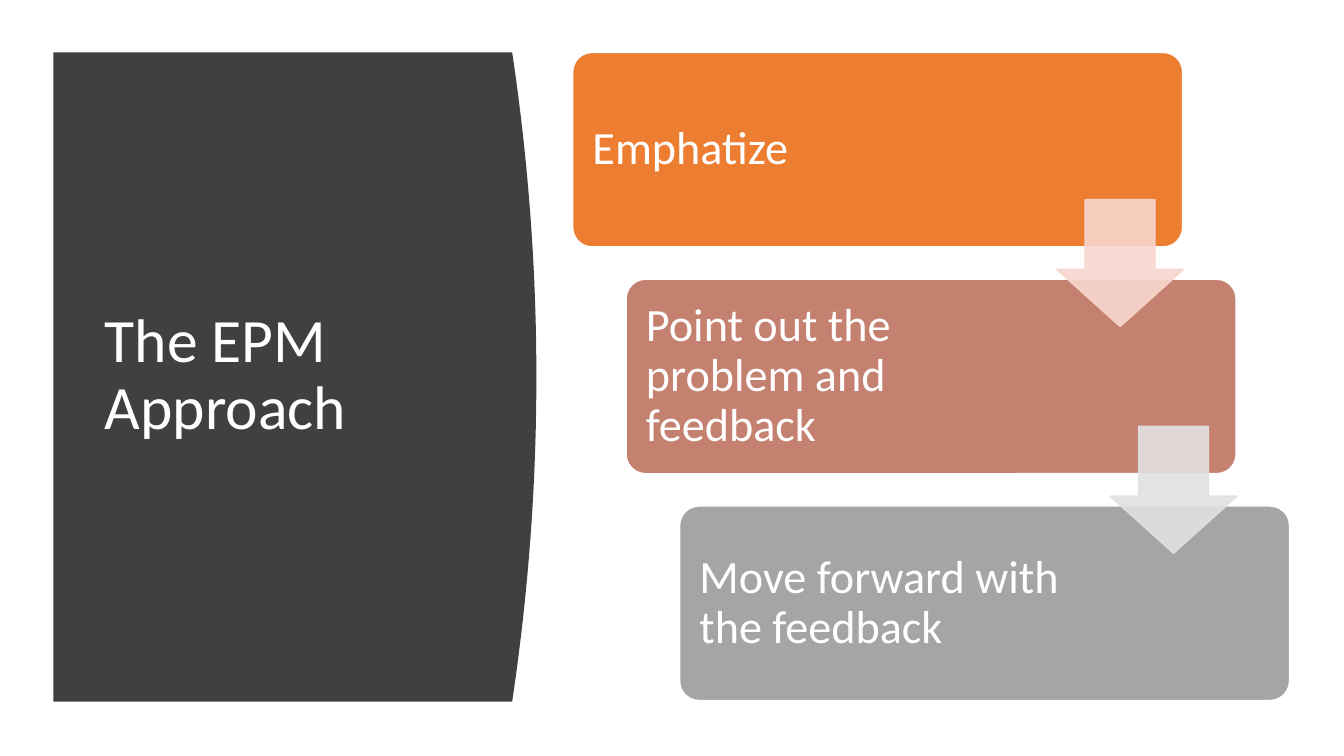
from dataclasses import dataclass
from lxml.etree import SubElement
from pptx import Presentation
from pptx.dml.color import RGBColor
from pptx.enum.shapes import MSO_SHAPE
from pptx.enum.text import MSO_ANCHOR, MSO_AUTO_SIZE, PP_ALIGN
from pptx.oxml.ns import qn
from pptx.util import Inches, Pt


@dataclass(frozen=True)
class Theme:
    font: str = "Calibri"
    white: str = "FFFFFF"
    panel: str = "404040"
    steps: tuple = ("ED7D31", "C48170", "A5A5A5")
    arrows: tuple = ("F8D7CE", "E1E1E1")
    title: int = 44
    body: int = 33


def apply(target, values):
    for name, value in values.items():
        setattr(target, name, value)


class Deck:
    def __init__(self, theme):
        self.theme = theme
        self.file = Presentation()
        apply(self.file, {"slide_width": Inches(13.33), "slide_height": Inches(7.5)})
        self.slide = self.file.slides.add_slide(self.file.slide_layouts[5])
        self.shapes = self.slide.shapes

    def paint(self, shape, fill, line=None, alpha=100):
        shape.shadow.inherit = False
        shape.fill.solid()
        shape.fill.fore_color.rgb = RGBColor.from_string(fill)
        if line is None:
            shape.line.fill.background()
            return
        shape.line.color.rgb = RGBColor.from_string(line)
        shape.line.width = Pt(1)
        if alpha < 100:
            for color in shape.element.spPr.iter(qn("a:srgbClr")):
                SubElement(color, qn("a:alpha"), val=str(alpha * 1000))

    def label(self, shape, text, size, inset):
        frame = shape.text_frame
        frame.text = text
        apply(frame, {
            "word_wrap": True,
            "auto_size": MSO_AUTO_SIZE.NONE,
            "vertical_anchor": MSO_ANCHOR.MIDDLE,
            **{f"margin_{side}": Inches(gap) for side, gap in inset.items()},
        })
        line = frame.paragraphs[0]
        apply(line, {"alignment": PP_ALIGN.LEFT, "line_spacing": 0.9})
        font = line.runs[0].font
        apply(font, {"name": self.theme.font, "size": Pt(size)})
        font.color.rgb = RGBColor.from_string(self.theme.white)

    def title(self, text, left, top, width, height):
        shape = self.shapes.title
        apply(shape, {
            "left": Inches(left), "top": Inches(top),
            "width": Inches(width), "height": Inches(height),
        })
        inset = {"left": 0.1, "right": 0.1, "top": 0.05, "bottom": 0.05}
        self.label(shape, text, self.theme.title, inset)

    def panel(self, left, top, edge, bulge, height, parts=40):
        curve = [
            (edge + bulge * (1 - (2 * part / parts - 1) ** 2),
             top + height * part / parts)
            for part in range(parts + 1)
        ]
        points = [(Inches(x), Inches(y)) for x, y in curve + [(left, top + height)]]
        pen = self.shapes.build_freeform(Inches(left), Inches(top))
        pen.add_line_segments(points, close=True)
        shape = pen.convert_to_shape()
        self.paint(shape, self.theme.panel)
        self.shapes.title.element.addprevious(shape.element)

    def step(self, text, fill, left, top, width, height):
        shape = self.shapes.add_shape(
            MSO_SHAPE.ROUNDED_RECTANGLE,
            Inches(left), Inches(top), Inches(width), Inches(height))
        shape.adjustments[0] = 0.1
        self.paint(shape, fill, self.theme.white)
        inset = {"left": 0.14, "right": 1.92, "top": 0.14, "bottom": 0.14}
        self.label(shape, text, self.theme.body, inset)

    def arrow(self, fill, left, top, size):
        shape = self.shapes.add_shape(
            MSO_SHAPE.DOWN_ARROW,
            Inches(left), Inches(top), Inches(size), Inches(size))
        shape.adjustments[0] = 0.55
        shape.adjustments[1] = 0.45
        self.paint(shape, fill, fill, alpha=90)


def main():
    theme = Theme()
    deck = Deck(theme)
    deck.title("The EPM Approach", 0.94, 1.11, 3.74, 5.24)
    deck.panel(0.53, 0.52, 5.08, 0.24, 6.44)

    shift, drop = 0.53, 2.25
    steps = ("Emphatize", "Point out the problem and feedback",
             "Move forward with the feedback")
    for row, (text, fill) in enumerate(zip(steps, theme.steps)):
        deck.step(text, fill, 5.68 + row * shift, 0.52 + row * drop, 6.05, 1.93)
    for row, fill in enumerate(theme.arrows):
        deck.arrow(fill, 10.48 + row * shift, 1.98 + row * drop, 1.26)

    deck.file.save("out.pptx")


if __name__ == "__main__":
    main()
